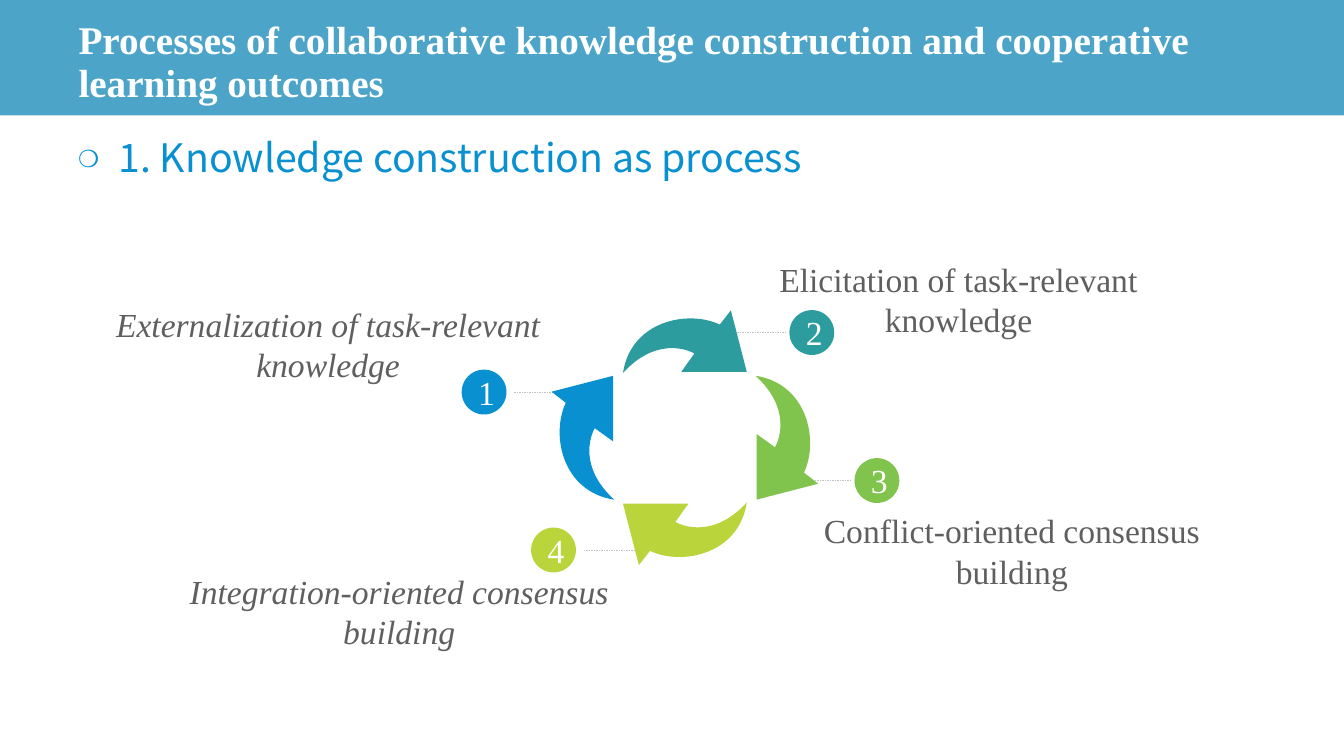
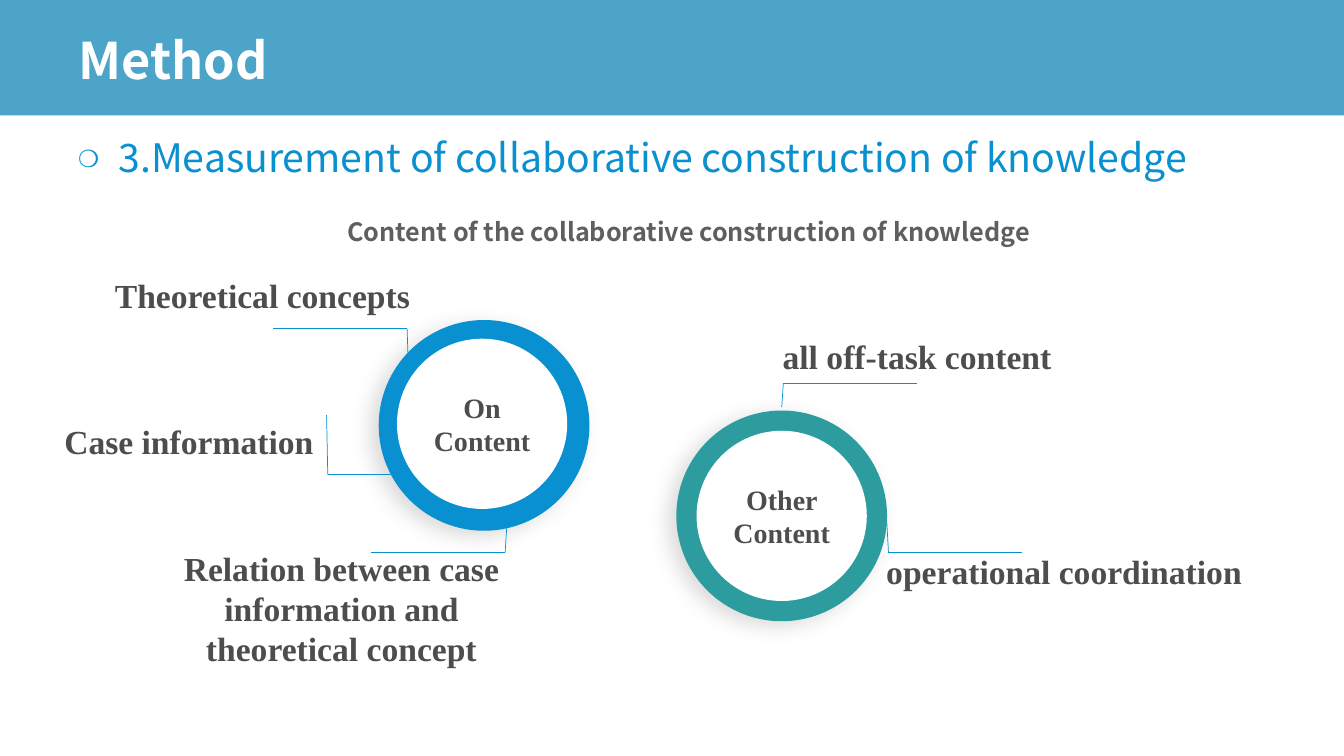
from lxml.etree import SubElement
from pptx import Presentation
from pptx.dml.color import RGBColor
from pptx.enum.dml import MSO_LINE
from pptx.enum.shapes import MSO_CONNECTOR, MSO_SHAPE as SHAPE
from pptx.enum.text import MSO_ANCHOR as ANCHOR, PP_ALIGN as ALIGN
from pptx.oxml.ns import qn
from pptx.util import Cm, Pt

# Shared look
SERIF, SANS = "Times New Roman", "Noto Sans CJK SC"
BLUE, TEAL, GREEN, LIME = "0890D0", "2D9C9F", "80C34D", "BAD43B"
WHITE, GREY, DARK, DASH_GREY = "FFFFFF", "5F5F5F", "4D4D4D", "C2C2C2"
BAND, SHADOW = "0080B2", "A6A6A6"
SLIDE_W, SLIDE_H = 33.87, 19.05
BAND_BOX = (-0.03, -0.05, 33.91, 2.96)
TITLE_BOX = (1.73, 0.49, 30.43, 2.21)
TOPIC_BOX = (1.72, 3.12, 30.43, 2.29)
TOPIC_FONT = dict(name=SANS, size=Pt(28))
CENTRED = dict(alignment=ALIGN.CENTER)

# Slide 1: steps clockwise from the top arrow
# number, colour, badge centre, badge side (1 = right), label, label box, italic
CYCLE_TITLE = ("Processes of collaborative knowledge construction "
               "and cooperative learning outcomes")
CYCLE_TOPIC = "1. Knowledge construction as process"
STEPS = [
    ("2", TEAL, (20.46, 8.38), 1, "Elicitation of task-relevant knowledge",
     (17.74, 6.22, 12.83, 2.64), False),
    ("3", GREEN, (22.1, 12.11), 1, "Conflict-oriented consensus building",
     (20.24, 12.55, 10.52, 2.64), False),
    ("4", LIME, (13.95, 13.86), -1, "Integration-oriented consensus building",
     (4.27, 14.07, 11.58, 2.64), True),
    ("1", BLUE, (12.2, 9.88), -1, "Externalization of task-relevant knowledge",
     (1.96, 7.35, 12.62, 2.64), True),
]
CYCLE_CENTRE, CYCLE_RADII = (17.26, 11.04), (2.58, 2.43)
BADGE, DASH = 1.13, 1.55
DASH_GAP = {1: 0.08, -1: 0.2}

# Top arrow around its own centre: straight head, then two curves of the tail
ARROW_HEAD = [(1.16, -0.79), (1.56, 0.76), (-0.09, 0.76), (0.24, 0.3)]
ARROW_CURVES = [
    [(0.04, 0.18), (-0.75, -0.1), (-1.56, 0.79)],
    [(-1.36, -0.53), (0.09, -0.81), (0.88, -0.43)],
]

# Slide 2
METHOD_TITLE = "Method"
METHOD_TOPIC = "3.Measurement of collaborative construction of knowledge"
METHOD_HEADING = "Content of the collaborative construction of knowledge"
HEADING_BOX = (0, 4.95, SLIDE_W, 1.42)
DISC, HOLE = 5.31, 4.29
# text, colour, disc centre, hole centre
RINGS = [
    ("On Content", BLUE, (12.2, 10.72), (12.15, 10.68)),
    ("Other Content", TEAL, (19.7, 13), (19.7, 13)),
]
# label, box, wraps, elbow line from the ring outwards
CALLOUTS = [
    ("Relation between case information and theoretical concept",
     (3.51, 13.67, 10.19, 3.33), True,
     [(12.78, 13.13), (12.73, 13.92), (9.35, 13.92)]),
    ("Case information", (1.33, 10.49, 6.86, 1.27), False,
     [(10.13, 11.96), (8.26, 11.96), (8.23, 10.46)]),
    ("Theoretical concepts", (2.6, 6.81, 8.03, 1.27), False,
     [(10.29, 9.22), (10.26, 8.28), (6.88, 8.28)]),
    ("all off-task content", (19.44, 8.34, 7.34, 1.27), False,
     [(19.7, 10.26), (19.74, 9.67), (23.11, 9.67)]),
    ("operational coordination", (22.04, 13.76, 9.55, 1.27), False,
     [(22.35, 13.18), (22.39, 13.92), (25.76, 13.92)]),
]


def rgb(value):
    return RGBColor.from_string(value)


def add_xml(parent, tag, **attrs):
    return SubElement(parent, qn(tag), {k: str(v) for k, v in attrs.items()})


def apply(target, values):
    for name, value in values.items():
        setattr(target, name, value)


def write(tf, text, color, font, para=CENTRED):
    p = tf.paragraphs[0]
    apply(p, para)
    r = p.add_run()
    r.text = text
    apply(r.font, font)
    r.font.color.rgb = rgb(color)
    return p


def add_text(slide, box, text, color, font, para=CENTRED,
             anchor=ANCHOR.TOP, wrap=True):
    tf = slide.shapes.add_textbox(*map(Cm, box)).text_frame
    apply(tf, dict(word_wrap=wrap, vertical_anchor=anchor))
    return write(tf, text, color, font, para)


def paint(sp, color):
    sp.shadow.inherit = False
    sp.fill.solid()
    sp.fill.fore_color.rgb = rgb(color)
    sp.line.fill.background()
    return sp


def add_circle(slide, centre, size, color):
    left, top = (c - size / 2 for c in centre)
    return paint(slide.shapes.add_shape(
        SHAPE.OVAL, Cm(left), Cm(top), Cm(size), Cm(size)), color)


def add_line(slide, start, end, color, width, dash=None):
    ln = slide.shapes.add_connector(
        MSO_CONNECTOR.STRAIGHT, *map(Cm, (*start, *end)))
    ln.line.color.rgb = rgb(color)
    ln.line.width = Pt(width)
    if dash:
        ln.line.dash_style = dash
    add_xml(ln._element.spPr, "a:effectLst")


def add_slide(prs, title, title_font, topic):
    """Blank slide with the band, the title and the bulleted topic."""
    slide = prs.slides.add_slide(prs.slide_layouts[6])
    band = paint(slide.shapes.add_shape(
        SHAPE.RECTANGLE, *map(Cm, BAND_BOX)), BAND)
    fill = band._element.spPr.find(qn("a:solidFill"))
    add_xml(fill[0], "a:alpha", val=70000)
    add_text(slide, TITLE_BOX, title, WHITE, dict(bold=True, **title_font),
             dict(line_spacing=0.9), ANCHOR.MIDDLE)
    p = add_text(slide, TOPIC_BOX, topic, BLUE, TOPIC_FONT,
                 dict(alignment=ALIGN.JUSTIFY, line_spacing=1.1))
    pPr = p._p.get_or_add_pPr()
    pPr.set("marL", str(Cm(1.02)))
    pPr.set("indent", str(Cm(-1.02)))
    add_xml(add_xml(pPr, "a:buClr"), "a:srgbClr", val=BLUE)
    add_xml(pPr, "a:buSzPct", val=60000)
    add_xml(pPr, "a:buFont", typeface=SANS)
    add_xml(pPr, "a:buChar", char="❍")
    return slide


def add_arrow(slide, turns, color):
    """Cycle arrow, turned clockwise by quarter turns."""
    dx, dy = [(0, -1), (1, 0), (0, 1), (-1, 0)][turns]
    cx = CYCLE_CENTRE[0] + dx * CYCLE_RADII[0]
    cy = CYCLE_CENTRE[1] + dy * CYCLE_RADII[1]
    points = [(Cm(cx + x), Cm(cy + y))
              for x, y in sum(ARROW_CURVES, ARROW_HEAD)]
    outline = slide.shapes.build_freeform(*points[0])
    outline.add_line_segments(points[1:], close=True)
    sp = paint(outline.convert_to_shape(), color)
    sp.rotation = 90 * turns
    # Turn each three segments of the tail into one curve
    segments = list(sp._element.iter(qn("a:lnTo")))[len(ARROW_HEAD) - 1:]
    for i in range(0, len(segments), 3):
        curve = add_xml(segments[i].getparent(), "a:cubicBezTo")
        segments[i].addprevious(curve)
        for segment in segments[i:i + 3]:
            curve.append(segment[0])
            segment.getparent().remove(segment)


def build_cycle(prs):
    slide = add_slide(prs, CYCLE_TITLE, dict(name=SERIF, size=Pt(28)),
                      CYCLE_TOPIC)
    font = dict(name=SERIF, size=Pt(24))
    # Dashes and numbered badges
    for number, color, (x, y), side, *_ in STEPS:
        start = x - side * (BADGE / 2 + DASH_GAP[side])
        add_line(slide, (start, y), (start - side * DASH, y),
                 DASH_GREY, 0.25, MSO_LINE.DASH)
        badge = add_circle(slide, (x, y), BADGE, color)
        write(badge.text_frame, number, WHITE, font)
    # Arrows and labels
    for turns, (_, color, _, _, label, box, italic) in enumerate(STEPS):
        add_arrow(slide, turns, color)
        add_text(slide, box, label, GREY, dict(italic=italic, **font),
                 anchor=ANCHOR.MIDDLE)


def build_method(prs):
    slide = add_slide(prs, METHOD_TITLE, dict(name=SANS, size=Pt(36)),
                      METHOD_TOPIC)
    p = add_text(slide, HEADING_BOX, METHOD_HEADING, GREY,
                 dict(name=SANS, size=Pt(18), bold=True),
                 dict(line_spacing=1.5, **CENTRED))
    p._p.get_or_add_pPr().set("indent", str(Cm(0.84)))
    # Rings
    for text, color, disc_centre, hole_centre in RINGS:
        disc = add_circle(slide, disc_centre, DISC, color)
        effects = disc._element.spPr.find(qn("a:effectLst"))
        shadow = add_xml(effects, "a:outerShdw", blurRad=Pt(14), dist=Pt(7),
                         dir=150 * 60000, algn="ctr", rotWithShape=0)
        tint = add_xml(shadow, "a:srgbClr", val=SHADOW)
        add_xml(tint, "a:alpha", val=40000)
        tf = add_circle(slide, hole_centre, HOLE, WHITE).text_frame
        apply(tf, dict(margin_left=0, margin_top=0,
                       margin_right=0, margin_bottom=0))
        write(tf, text, DARK, dict(name=SERIF, size=Pt(20), bold=True))
    # Callouts
    for label, box, wrap, elbow in CALLOUTS:
        add_text(slide, box, label, DARK,
                 dict(name=SERIF, size=Pt(24), bold=True), wrap=wrap)
        for start, end in zip(elbow, elbow[1:]):
            add_line(slide, start, end, BLUE, 0.5)


def main():
    prs = Presentation()
    prs.slide_width, prs.slide_height = Cm(SLIDE_W), Cm(SLIDE_H)
    build_cycle(prs)
    build_method(prs)
    prs.save("out.pptx")


if __name__ == "__main__":
    main()
